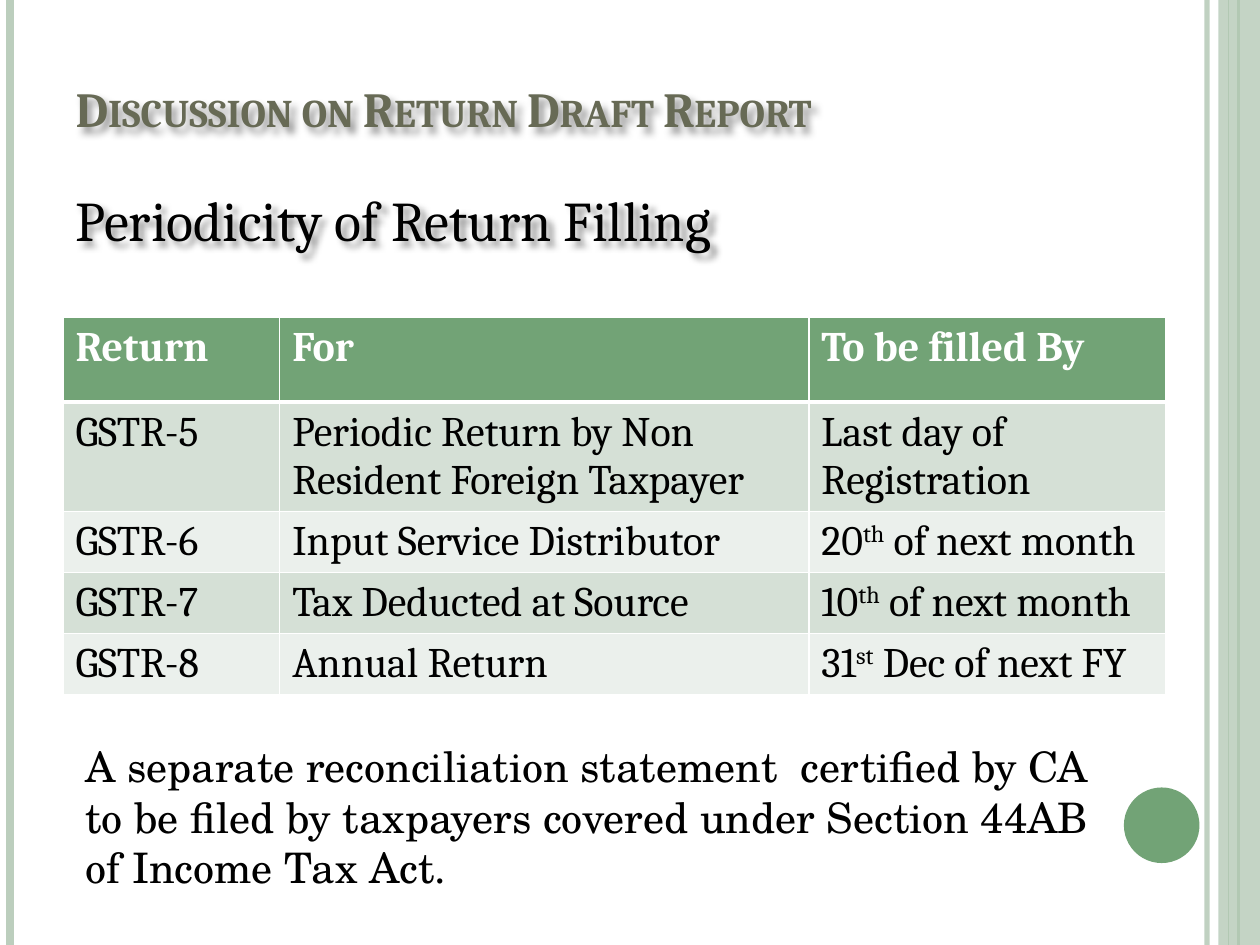
from lxml import etree
from pptx import Presentation
from pptx import util as u
from pptx.dml.color import RGBColor
from pptx.enum import shapes, text
from pptx.oxml import parse_xml
from pptx.oxml.ns import nsdecls, qn

# Content
TITLE = "Discussion on Return Draft Report"
HEAD = "Periodicity of Return Filling"
NOTE = ("A separate reconciliation statement  certified by CA to be filed "
        "by taxpayers covered under Section 44AB of Income Tax Act.")
# A cell is a list of runs; every second run is raised
ROWS = [
    (["Return"], ["For"], ["To be filled By"]),
    (["GSTR-5"], ["Periodic Return by Non Resident Foreign Taxpayer"],
     ["Last day of Registration"]),
    (["GSTR-6"], ["Input Service Distributor"], ["20", "th", " of next month"]),
    (["GSTR-7"], ["Tax Deducted at Source"], ["10", "th", " of next month"]),
    (["GSTR-8"], ["Annual Return"], ["31", "st", " Dec of next FY"]),
]

# Look
HUES = {"green": "72A376", "pale": "BCCEBD", "olive": "676A55",
        "odd": "D5E0D6", "even": "EBF0EC", "white": "FFFFFF", "black": "000000"}
WIDE, HIGH = 10, 7.5
COLS = [1.72, 4.2, 2.83]
TALL = [0.67, 0.87, 0.48, 0.48, 0.48]
# Upright rules: x, colour, points, opacity
RULES = [(9.58, "pale", 3, 93), (0.08, "pale", 4.5, 100),
         (9.83, "green", 1.5, 100), (9.75, "green", 0.75, 100)]


def hue(name):
    return RGBColor.from_string(HUES[name])


def box(*nums):
    return [u.Inches(n) for n in nums]


def fade(part, share):
    for clr in part.iter(qn("a:srgbClr")):
        etree.SubElement(clr, qn("a:alpha")).set("val", str(share * 1000))


def write(para, words, color, size=24, name="Cambria", bold=False):
    for i, word in enumerate(words):
        run = para.add_run()
        run.text = word
        look = {"size": u.Pt(size), "name": name, "bold": bold}
        for key, val in look.items():
            setattr(run.font, key, val)
        run.font.color.rgb = hue(color)
        if i % 2:
            run.font._element.set("baseline", "30000")


def frame(shape, **more):
    look = {"word_wrap": True, "auto_size": text.MSO_AUTO_SIZE.NONE, **more}
    for key, val in look.items():
        setattr(shape.text_frame, key, val)
    para = shape.text_frame.paragraphs[0]
    para.alignment = text.PP_ALIGN.LEFT
    return para


def shade(shape):
    shape._element.spPr.append(parse_xml(
        f'<a:effectLst {nsdecls("a")}><a:outerShdw blurRad="50800" dist="50800" '
        'dir="2700000" algn="tl" rotWithShape="0"><a:srgbClr val="000000">'
        '<a:alpha val="40000"/></a:srgbClr></a:outerShdw></a:effectLst>'))


def block(slide, kind, place, color):
    shape = slide.shapes.add_shape(kind, *box(*place))
    shape.shadow.inherit = False
    shape.fill.solid()
    shape.fill.fore_color.rgb = hue(color)
    shape.line.fill.background()
    return shape


def edge(cell, head):
    for side in "LRTB":
        pts = 3 if head and side == "B" else 1
        cell._tc.get_or_add_tcPr().append(parse_xml(
            f'<a:ln{side} {nsdecls("a")} w="{u.Pt(pts)}"><a:solidFill>'
            f'<a:srgbClr val="{HUES["white"]}"/></a:solidFill></a:ln{side}>'))


def main():
    deck = Presentation()
    deck.slide_width, deck.slide_height = box(WIDE, HIGH)
    slide = deck.slides.add_slide(deck.slide_layouts[5])

    # Side rules, band and dot
    for x, color, pts, share in RULES:
        rule = slide.shapes.add_connector(
            shapes.MSO_CONNECTOR.STRAIGHT, *box(x, 0, x, HIGH))
        rule.line.color.rgb = hue(color)
        rule.line.width = u.Pt(pts)
        etree.SubElement(rule._element.spPr, qn("a:effectLst"))
        if share < 100:
            fade(rule._element.spPr, share)
    band = block(slide, shapes.MSO_SHAPE.RECTANGLE, (9.67, 0, 0.33, HIGH), "pale")
    fade(band._element.spPr, 87)
    block(slide, shapes.MSO_SHAPE.OVAL, (8.92, 6.25, 0.6, 0.6), "green")

    # Title
    title = slide.shapes.title
    title.left, title.top, title.width, title.height = box(0.5, 0.42, 8.17, 0.72)
    para = frame(title, vertical_anchor=text.MSO_ANCHOR.BOTTOM)
    write(para, [TITLE], "olive", 28, bold=True)
    para.runs[0].font._element.set("cap", "small")
    shade(title)

    # Heading
    head = slide.shapes.add_textbox(*box(0.5, 1.42, 8.67, 0.8))
    write(frame(head), [HEAD], "black", 32)
    shade(head)

    # Table
    grid = slide.shapes.add_table(
        len(ROWS), len(COLS), *box(0.5, 2.52, sum(COLS), sum(TALL))).table
    for col, wide in zip(grid.columns, COLS):
        col.width = u.Inches(wide)
    for r, (row, tall) in enumerate(zip(ROWS, TALL)):
        grid.rows[r].height = u.Inches(tall)
        back = "green" if r == 0 else "odd" if r % 2 else "even"
        for c, words in enumerate(row):
            cell = grid.cell(r, c)
            edge(cell, r == 0)
            cell.fill.solid()
            cell.fill.fore_color.rgb = hue(back)
            write(cell.text_frame.paragraphs[0], words,
                  "black" if r else "white", bold=r == 0)

    # Note
    note = slide.shapes.add_textbox(*box(0.58, 5.83, 8.33, 1.31))
    write(frame(note), [NOTE], "black", name="TeX Gyre Schola")

    deck.save("out.pptx")


if __name__ == "__main__":
    main()
